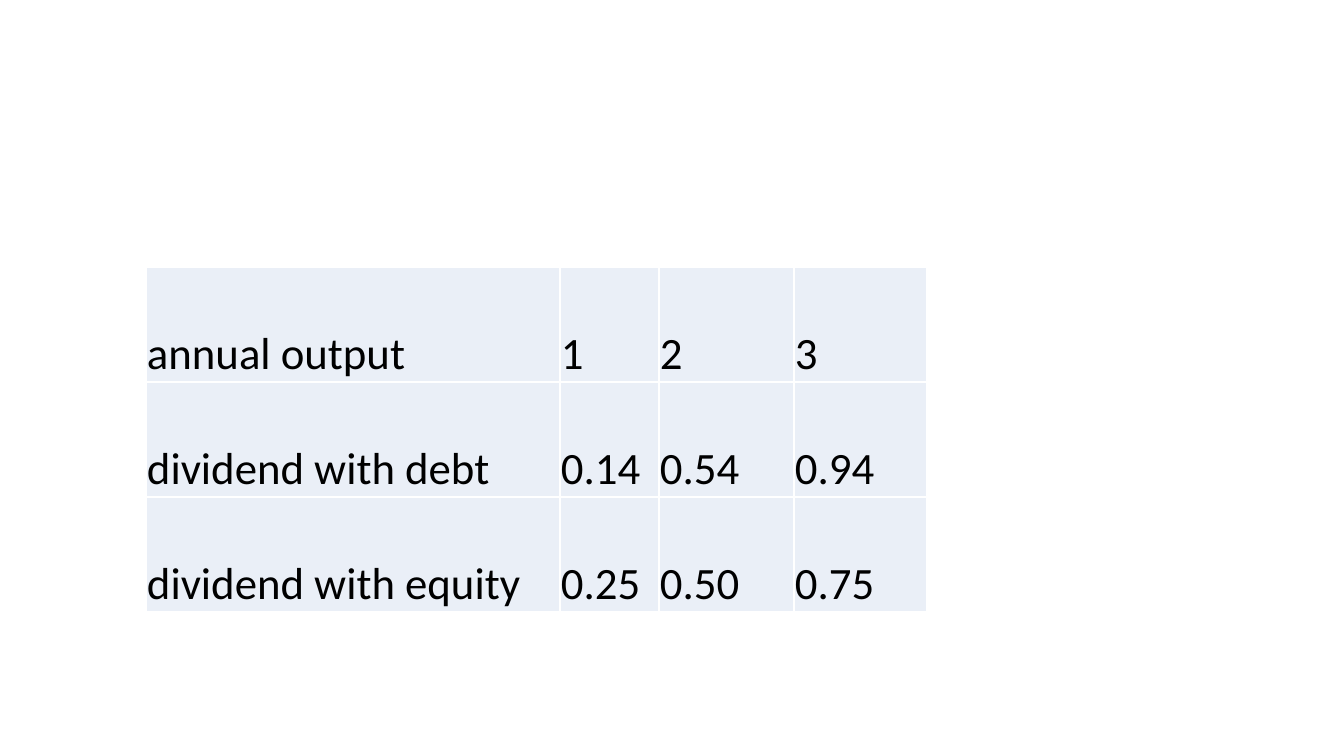
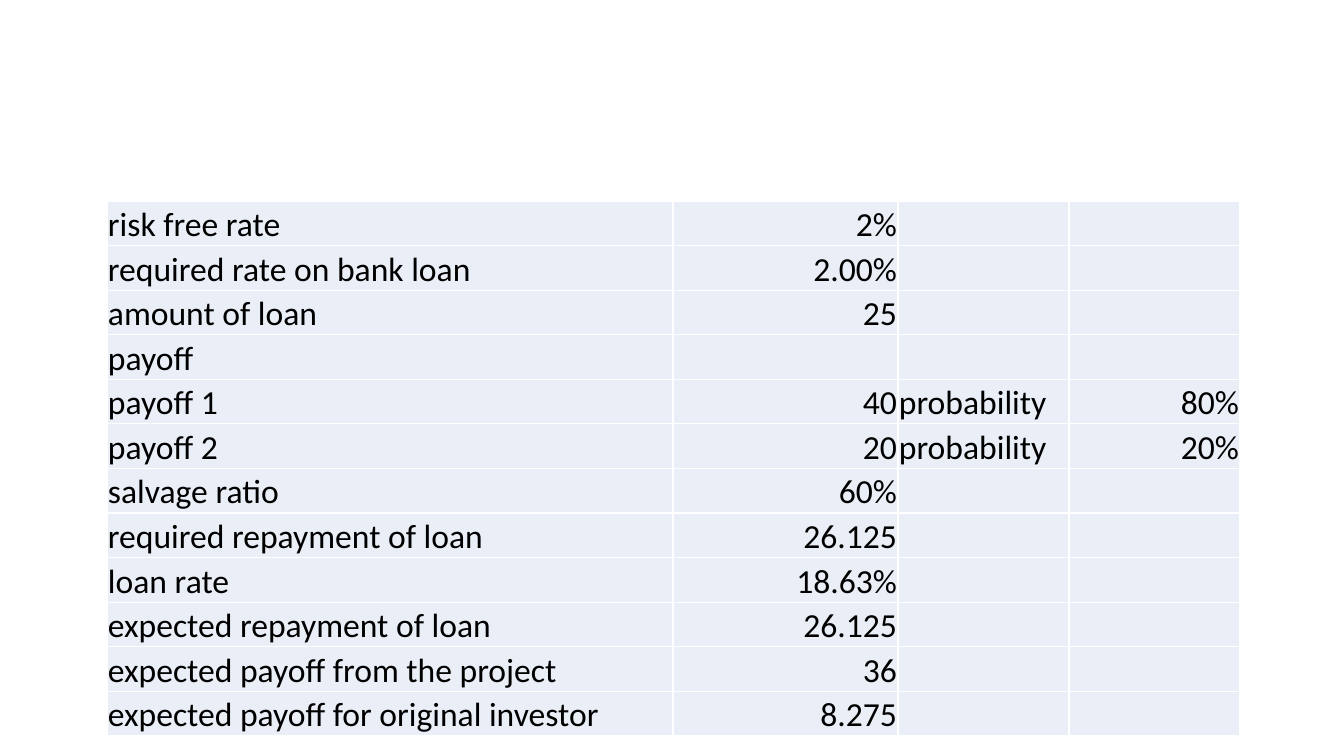
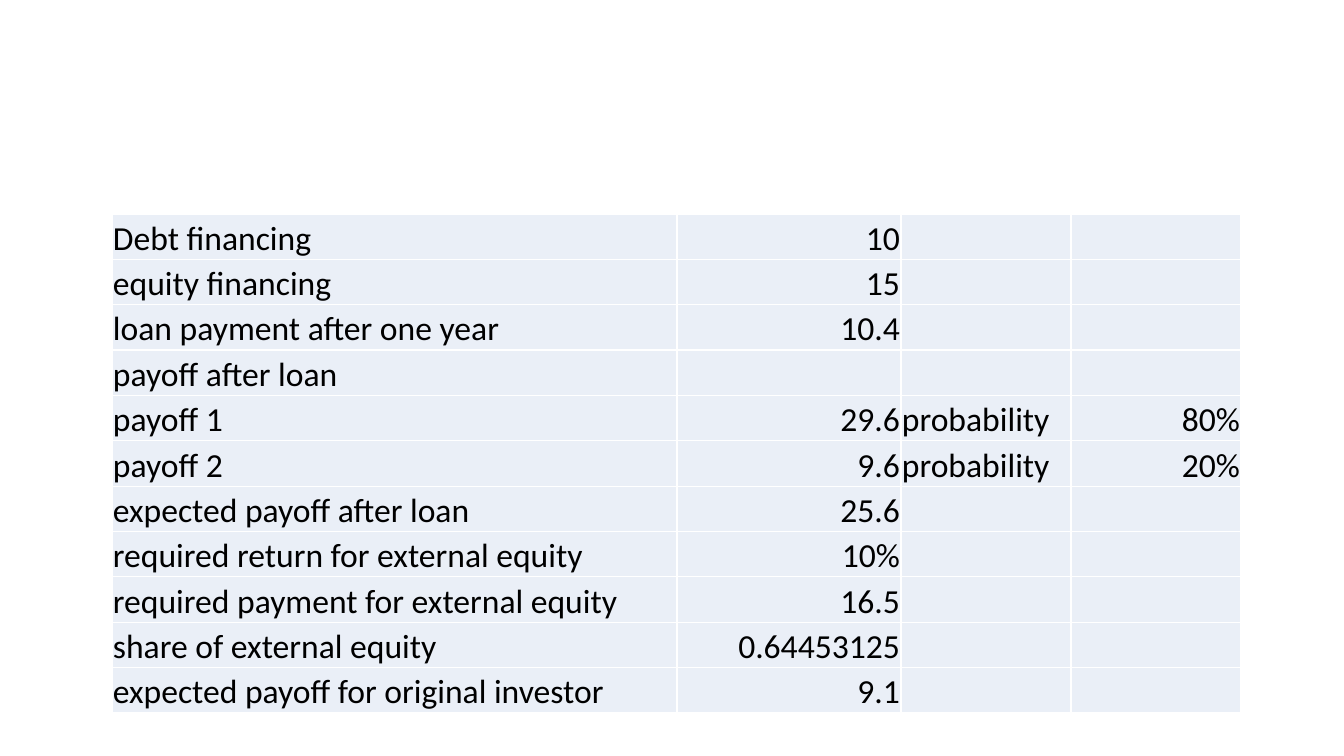
from lxml.etree import SubElement
from pptx import Presentation
from pptx.dml.color import RGBColor
from pptx.enum.text import MSO_ANCHOR as Anchor, PP_ALIGN as Align
from pptx.oxml.ns import qn
from pptx.util import Emu, Pt

EMU_PER_PX = 914400 / 100.8
SLIDE_WIDTH, SLIDE_HEIGHT = 1344, 756
FONT = "Calibri"
INK, CELL_FILL, GRID_LINE = "000000", "EAEFF7", "FFFFFF"
BLANK_LAYOUT = 6

DIVIDENDS = [
    ("annual output", "1", "2", "3"),
    ("dividend with debt", "0.14", "0.54", "0.94"),
    ("dividend with equity", "0.25", "0.50", "0.75"),
]
BANK_LOAN = [
    ("risk free rate", "2%"),
    ("required rate on bank loan", "2.00%"),
    ("amount of loan", "25"),
    ("payoff",),
    ("payoff 1", "40", "probability", "80%"),
    ("payoff 2", "20", "probability", "20%"),
    ("salvage ratio", "60%"),
    ("required repayment of loan", "26.125"),
    ("loan rate", "18.63%"),
    ("expected repayment of loan", "26.125"),
    ("expected payoff from the project", "36"),
    ("expected payoff for original investor", "8.275"),
]
MIXED_FINANCING = [
    ("Debt financing", "10"),
    ("equity financing", "15"),
    ("loan payment after one year", "10.4"),
    ("payoff after loan",),
    ("payoff 1", "29.6", "probability", "80%"),
    ("payoff 2", "9.6", "probability", "20%"),
    ("expected payoff after loan", "25.6"),
    ("required return for external equity", "10%"),
    ("required payment for external equity", "16.5"),
    ("share of external equity", "0.64453125"),
    ("expected payoff for original investor", "9.1"),
]


def px(length):
    """Turn pixels into EMU."""
    return Emu(round(length * EMU_PER_PX))


def color(hex_string):
    """Turn a hex string into a colour."""
    return RGBColor.from_string(hex_string)


def write_text(frame, text, size=24, ink=INK, align=Align.LEFT):
    """Write one formatted paragraph into a text frame."""
    paragraph = frame.paragraphs[0]
    paragraph.alignment = align
    run = paragraph.add_run()
    run.text = text
    run.font.name, run.font.size = FONT, Pt(size)
    run.font.color.rgb = color(ink)


def draw_borders(cell, line_color=GRID_LINE, width=1):
    """Draw the four borders of a table cell."""
    properties = cell._tc.get_or_add_tcPr()
    for position, side in enumerate(("a:lnL", "a:lnR", "a:lnT", "a:lnB")):
        border = SubElement(properties, qn(side), w=str(Pt(width)))
        fill = SubElement(border, qn("a:solidFill"))
        SubElement(fill, qn("a:srgbClr"), val=line_color)
        properties.insert(position, border)


def style_cell(cell):
    """Give a cell the shared fill, borders, insets and anchor."""
    cell.fill.solid()
    cell.fill.fore_color.rgb = color(CELL_FILL)
    cell.margin_left = cell.margin_right = cell.margin_top = px(1)
    cell.margin_bottom = 0
    cell.vertical_anchor = Anchor.BOTTOM
    draw_borders(cell)


def add_figures_slide(deck, rows, left, top, height, widths, size=24, right_columns=(1, 3)):
    """Add a slide with one table of figures in the given box."""
    slide = deck.slides.add_slide(deck.slide_layouts[BLANK_LAYOUT])
    figures = slide.shapes.add_table(
        len(rows), len(widths), px(left), px(top), px(sum(widths)), px(height)
    ).table
    figures.first_row = figures.horz_banding = False
    for column, width in zip(figures.columns, widths):
        column.width = px(width)
    for row_index, entries in enumerate(rows):
        figures.rows[row_index].height = px(height / len(rows))
        for column_index in range(len(widths)):
            cell = figures.cell(row_index, column_index)
            style_cell(cell)
            if column_index < len(entries):
                align = Align.RIGHT if column_index in right_columns else Align.LEFT
                write_text(cell.text_frame, entries[column_index], size=size, align=align)


def main():
    """Build the three slides and save them."""
    deck = Presentation()
    deck.slide_width, deck.slide_height = px(SLIDE_WIDTH), px(SLIDE_HEIGHT)
    add_figures_slide(deck, DIVIDENDS, 146, 267, 345, (414, 99, 135, 133),
                      size=32, right_columns=())
    add_figures_slide(deck, BANK_LOAN, 107, 201, 535, (566, 225, 171, 171))
    add_figures_slide(deck, MIXED_FINANCING, 112, 214, 499, (565, 224, 170, 170))
    deck.save("out.pptx")


if __name__ == "__main__":
    main()
